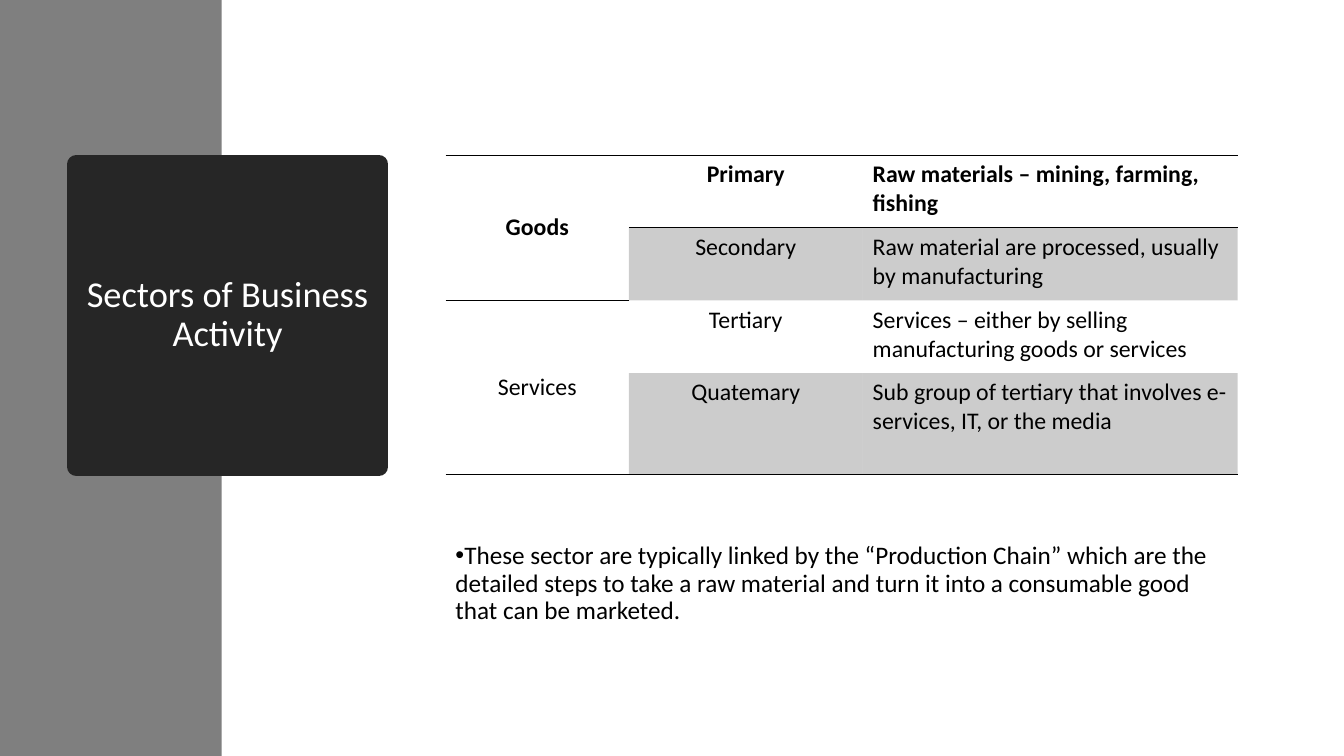
from dataclasses import dataclass

from lxml import etree
from pptx import Presentation
from pptx import util as u
from pptx.dml.color import RGBColor
from pptx.enum import shapes, text
from pptx.oxml import ns


@dataclass(frozen=True)
class Theme:
    font: str = "Calibri"
    white: str = "FFFFFF"
    black: str = "000000"
    band: str = "7F7F7F"
    title_box: str = "262626"
    title_size: float = 26
    body_size: float = 18
    table_size: float = 17


theme = Theme()
CENTER, LEFT = text.PP_ALIGN.CENTER, text.PP_ALIGN.LEFT


def write(frame, words, size, color=theme.black, bold=False, align=LEFT, spacing=None):
    frame.word_wrap = True
    para = frame.paragraphs[0]
    para.alignment = align
    para.line_spacing = spacing
    span = para.add_run()
    span.text = words
    span.font.name = theme.font
    span.font.size = u.Pt(size)
    span.font.bold = bold
    span.font.color.rgb = RGBColor.from_string(color)
    return para


def add_xml(parent, tag, **attributes):
    return etree.SubElement(parent, ns.qn(tag), attributes)


deck = Presentation()
deck.slide_width, deck.slide_height = u.Cm(33.87), u.Cm(19.05)
page = deck.slides.add_slide(deck.slide_layouts[6])

# Side band and title box
for left, top, width, height, color in (
    (0, 0, 5.59, 19.05, theme.band),
    (1.93, 4.14, 7.62, 7.62, theme.title_box),
):
    box = page.shapes.add_shape(
        shapes.MSO_SHAPE.RECTANGLE, u.Cm(left), u.Cm(top), u.Cm(width), u.Cm(height))
    box.shadow.inherit = False
    box.fill.solid()
    box.fill.fore_color.rgb = RGBColor.from_string(color)
    box.line.fill.background()

# The thick line with round joins gives the title box its soft corners
box.line.color.rgb = RGBColor.from_string(theme.title_box)
box.line.width = u.Pt(13.75)
add_xml(box.line._ln, "a:round")
box.text_frame.vertical_anchor = text.MSO_ANCHOR.MIDDLE
box.text_frame.margin_left = box.text_frame.margin_right = u.Cm(0.1)
write(box.text_frame, "Sectors of Business Activity", theme.title_size,
      color=theme.white, align=CENTER, spacing=0.9)

# Table of sectors
rows = (
    ("Goods", "Primary", "Raw materials – mining, farming, fishing"),
    ("", "Secondary", "Raw material are processed, usually by manufacturing"),
    ("Services", "Tertiary", "Services – either by selling manufacturing goods or services"),
    ("", "Quatemary", "Sub group of tertiary that involves e-services, IT, or the media"),
)
frame = page.shapes.add_table(4, 3, u.Cm(11.23), u.Cm(3.91), u.Cm(19.96), u.Cm(8.05))
table = frame.table
table.first_row = table.horz_banding = False
style = table._tbl.tblPr.find(ns.qn("a:tableStyleId"))
style.text = "{2D5ABB26-0587-4C30-8999-92F81FD0307C}"
for column, width in zip(table.columns, (4.62, 5.89, 9.45)):
    column.width = u.Cm(width)
for row, height in zip(table.rows, (1.83, 1.83, 1.83, 2.56)):
    row.height = u.Cm(height)
for first in (0, 2):
    table.cell(first, 0).merge(table.cell(first + 1, 0))

for r, row in enumerate(rows):
    for c, words in enumerate(row):
        cell = table.cell(r, c)
        # Rules: above the table, under the first and last rows, under each group
        edges = ["a:lnT"] if r == 0 else []
        if r in (0, 3) or c == 0:
            edges.append("a:lnB")
        for edge in edges:
            line = add_xml(cell._tc.get_or_add_tcPr(), edge, w=str(u.Pt(1)))
            add_xml(add_xml(line, "a:solidFill"), "a:srgbClr", val=theme.black)
        if c > 0 and r % 2:
            cell.fill.solid()
            cell.fill.fore_color.rgb = RGBColor.from_string(theme.black)
            shade = cell._tc.tcPr.find(ns.qn("a:solidFill"))
            add_xml(shade[0], "a:alpha", val="20000")
        else:
            cell.fill.background()
        if words:
            if c == 0:
                cell.vertical_anchor = text.MSO_ANCHOR.MIDDLE
            write(cell.text_frame, words, theme.table_size, bold=r == 0,
                  align=LEFT if c == 2 else CENTER)

# Bullet below the table
note = page.shapes.add_textbox(u.Cm(11.23), u.Cm(13.56), u.Cm(19.96), u.Cm(3.58))
para = write(
    note.text_frame,
    "These sector are typically linked by the “Production Chain” which are the detailed "
    "steps to take a raw material and turn it into a consumable good that can be marketed.",
    theme.body_size, spacing=0.9)
para.space_after = u.Pt(6)
bullet = para._p.get_or_add_pPr()
bullet.set("marL", "0")
bullet.set("indent", str(-u.Cm(0.64)))
add_xml(bullet, "a:buFont", typeface="Arial")
add_xml(bullet, "a:buChar", char="•")

deck.save("out.pptx")
